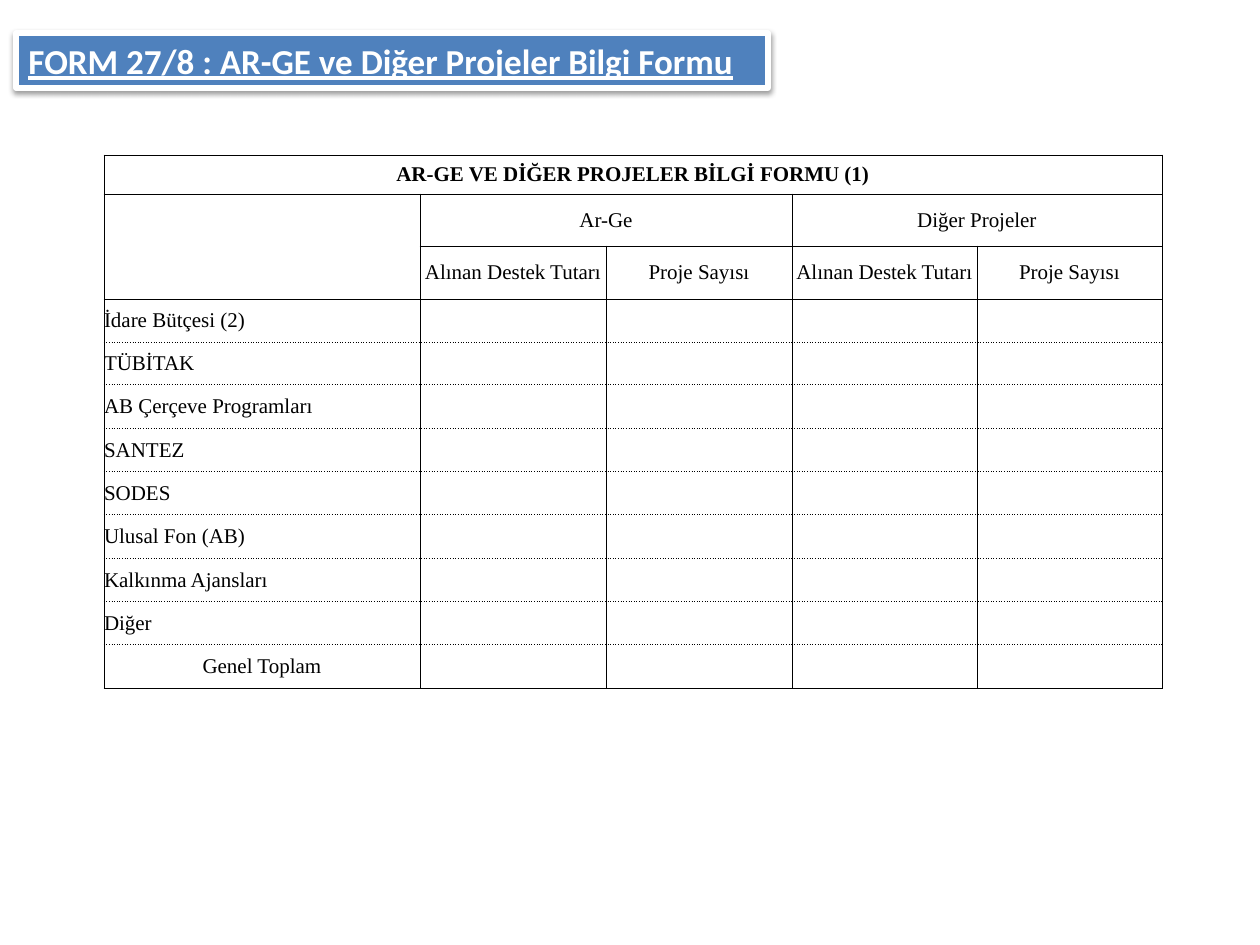
from lxml import etree
from pptx import Presentation
from pptx.dml.color import RGBColor
from pptx.enum.shapes import MSO_SHAPE
from pptx.enum.text import MSO_ANCHOR, MSO_AUTO_SIZE, PP_ALIGN
from pptx.oxml import parse_xml
from pptx.oxml.ns import nsdecls, qn
from pptx.util import Emu, Pt

RECTANGLE = MSO_SHAPE.RECTANGLE
MIDDLE = MSO_ANCHOR.MIDDLE
LEFT, CENTER = PP_ALIGN.LEFT, PP_ALIGN.CENTER
FIT_SHAPE = MSO_AUTO_SIZE.SHAPE_TO_FIT_TEXT

BLUE = RGBColor(0x4F, 0x81, 0xBD)
WHITE = RGBColor(0xFF, 0xFF, 0xFF)
BLACK = RGBColor(0, 0, 0)

BANNER_FONT = {"name": "Calibri", "size": Pt(20), "bold": True, "underline": True}
TABLE_FONT = {"name": "Times New Roman", "size": Pt(12), "bold": False}
TITLE_FONT = {**TABLE_FONT, "bold": True}

COLUMNS = [316, 186, 186, 185, 185]
HEADER_ROWS = [39, 52, 53]
BODY_ROWS = [43, 43, 44] * 3

GROUPS = ["Ar-Ge", "Diğer Projeler"]
MEASURES = ["Alınan Destek Tutarı", "Proje Sayısı"]
SOURCES = ["İdare Bütçesi (2)", "TÜBİTAK", "AB Çerçeve Programları", "SANTEZ",
           "SODES", "Ulusal Fon (AB)", "Kalkınma Ajansları", "Diğer"]


def px(count):
    return Emu(round(count * 914400 / 126))


def write(frame, text, font, color, align):
    para = frame.paragraphs[0]
    para.alignment = align
    span = para.add_run()
    span.text = text
    for name, value in font.items():
        setattr(span.font, name, value)
    span.font.color.rgb = color


def add_banner(page, text):
    banner = page.shapes.add_shape(RECTANGLE, px(16), px(33), px(752), px(55))
    banner.fill.solid()
    banner.fill.fore_color.rgb = BLUE
    banner.line.color.rgb = WHITE
    banner.line.width = Pt(3)
    banner._element.spPr.append(parse_xml(
        f'<a:effectLst {nsdecls("a")}>'
        '<a:outerShdw blurRad="40000" dist="20000" dir="5400000" rotWithShape="0">'
        '<a:srgbClr val="000000"><a:alpha val="38000"/></a:srgbClr>'
        '</a:outerShdw></a:effectLst>'))
    frame = banner.text_frame
    frame.word_wrap = True
    frame.auto_size = FIT_SHAPE
    write(frame, text, BANNER_FONT, WHITE, LEFT)


def set_borders(cell, dashes):
    """Draw the left, right, top and bottom borders, in that order."""
    properties = cell._tc.get_or_add_tcPr()
    for place, (side, dash) in enumerate(zip("LRTB", dashes)):
        line = etree.Element(qn(f"a:ln{side}"), w=str(Pt(0.5)))
        fill = etree.SubElement(line, qn("a:solidFill"))
        etree.SubElement(fill, qn("a:srgbClr"), val=str(BLACK))
        etree.SubElement(line, qn("a:prstDash"), val=dash)
        properties.insert(place, line)


def format_cells(table):
    first_body, last = len(HEADER_ROWS), len(table.rows) - 1
    for r in range(last + 1):
        top = "sysDot" if r > first_body else "solid"
        bottom = "sysDot" if first_body <= r < last else "solid"
        for c in range(len(COLUMNS)):
            cell = table.cell(r, c)
            cell.vertical_anchor = MIDDLE
            for side in ("left", "right", "top", "bottom"):
                setattr(cell, f"margin_{side}", 0)
            if r >= first_body and c > 0:
                cell.fill.solid()
                cell.fill.fore_color.rgb = WHITE
            else:
                cell.fill.background()
            set_borders(cell, ("solid", "solid", top, bottom))


def add_form(page):
    heights = HEADER_ROWS + BODY_ROWS
    table = page.shapes.add_table(
        len(heights), len(COLUMNS), px(104), px(155),
        px(sum(COLUMNS)), px(sum(heights))).table
    table.first_row = table.horz_banding = False
    for column, width in zip(table.columns, COLUMNS):
        column.width = px(width)
    for row, height in zip(table.rows, heights):
        row.height = px(height)
    format_cells(table)

    def put(r, c, text, align=CENTER, font=TABLE_FONT):
        write(table.cell(r, c).text_frame, text, font, BLACK, align)

    # Title and column headings
    table.cell(0, 0).merge(table.cell(0, 4))
    table.cell(1, 0).merge(table.cell(2, 0))
    put(0, 0, "AR-GE VE DİĞER PROJELER BİLGİ FORMU (1)", font=TITLE_FONT)
    for g, group in enumerate(GROUPS):
        first = 1 + g * len(MEASURES)
        table.cell(1, first).merge(table.cell(1, first + 1))
        put(1, first, group)
        for m, measure in enumerate(MEASURES):
            put(2, first + m, measure)

    # Funding sources and total
    for r, source in enumerate(SOURCES, len(HEADER_ROWS)):
        put(r, 0, source, LEFT)
    put(len(heights) - 1, 0, "Genel Toplam")


def main():
    deck = Presentation()
    deck.slide_width, deck.slide_height = px(1260), px(945)
    page = deck.slides.add_slide(deck.slide_layouts[6])
    add_form(page)
    add_banner(page, "FORM 27/8 : AR-GE ve Diğer Projeler Bilgi Formu")
    deck.save("out.pptx")


if __name__ == "__main__":
    main()
